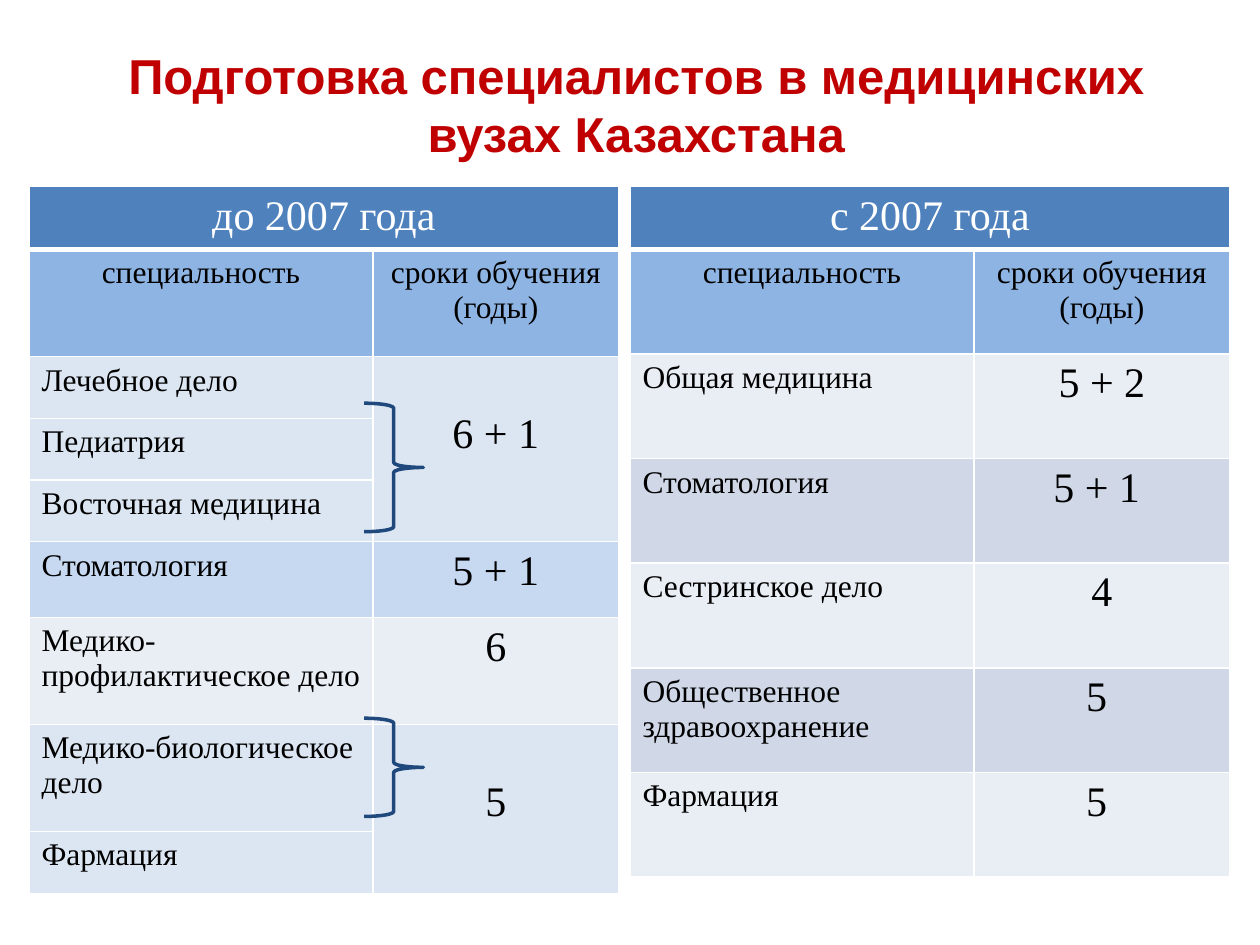
from dataclasses import dataclass

from lxml import etree
from pptx import Presentation
from pptx.dml.color import RGBColor
from pptx.enum.shapes import MSO_SHAPE
from pptx.enum.text import MSO_ANCHOR, PP_ALIGN
from pptx.oxml.ns import qn
from pptx.util import Inches, Pt

LEFT, CENTER = PP_ALIGN.LEFT, PP_ALIGN.CENTER
MIDDLE = MSO_ANCHOR.MIDDLE
RIGHT_BRACE = MSO_SHAPE.RIGHT_BRACE
BLANK_LAYOUT = 6

# The page is a grid of 100 columns by 75 rows, each step 0.1 inch.
GRID_COLUMNS, GRID_ROWS = 100, 75


@dataclass(frozen=True)
class Theme:
    title_font: str = "Arial"
    body_font: str = "Times New Roman"
    title_size: float = 28
    large_size: float = 24
    body_size: float = 18
    title: str = "C00000"
    text: str = "000000"
    white: str = "FFFFFF"
    period: str = "4F81BD"
    heading: str = "8EB4E3"
    group: str = "DCE6F2"
    accent: str = "C6D9F1"
    light: str = "E9EDF4"
    dark: str = "D0D8E8"
    brace: str = "1F497D"
    border: float = 1
    heavy_border: float = 3
    brace_line: float = 2


THEME = Theme()


@dataclass(frozen=True)
class Area:
    column: float
    row: float
    width: float
    height: float


@dataclass(frozen=True)
class Programme:
    name: str
    years: str
    fill: str
    height: float
    span: int = 1  # rows that share the value in the years column


@dataclass(frozen=True)
class Period:
    title: str
    column: float
    widths: tuple[float, float]
    heading_height: float
    programmes: list[Programme]


TABLE_TOP, PERIOD_HEIGHT = 14.8, 4.7
SHORT, MEDIUM, TALL, EVEN = 4.9, 6, 8.5, 8.3

PERIODS = [
    Period("до 2007 года", 2.3, (27.3, 19.5), TALL, [
        Programme("Лечебное дело", "6 + 1", THEME.group, SHORT, span=3),
        Programme("Педиатрия", "", THEME.group, SHORT),
        Programme("Восточная медицина", "", THEME.group, SHORT),
        Programme("Стоматология", "5 + 1", THEME.accent, MEDIUM),
        Programme("Медико-профилактическое дело", "6", THEME.light, TALL),
        Programme("Медико-биологическое дело", "5", THEME.group, TALL, span=2),
        Programme("Фармация", "", THEME.group, SHORT),
    ]),
    Period("с 2007 года", 50, (27.3, 20.3), EVEN, [
        Programme("Общая медицина", "5 + 2", THEME.light, EVEN),
        Programme("Стоматология", "5 + 1 ", THEME.dark, EVEN),
        Programme("Сестринское дело", "4", THEME.light, EVEN),
        Programme("Общественное здравоохранение", "5 ", THEME.dark, EVEN),
        Programme("Фармация", "5 ", THEME.light, EVEN),
    ]),
]

BRACES = [Area(28.9, 32, 4.7, 10.2), Area(28.9, 57, 4.7, 7.8)]


def steps(count: float) -> int:
    return Inches(count / 10)


def place(area: Area) -> tuple[int, ...]:
    return tuple(map(steps, (area.column, area.row, area.width, area.height)))


def write(frame, text: str, *, size: float = THEME.body_size,
          color: str = THEME.text, font: str = THEME.body_font,
          bold: bool = False, align=LEFT) -> None:
    para = frame.paragraphs[0]
    para.alignment = align
    span = para.add_run()
    span.text = text
    span.font.size = Pt(size)
    span.font.name = font
    span.font.bold = bold
    span.font.color.rgb = RGBColor.from_string(color)


def paint(cell, fill: str, bottom: float = THEME.border) -> None:
    """Fill a cell and give it white borders."""
    cell.fill.solid()
    cell.fill.fore_color.rgb = RGBColor.from_string(fill)
    properties = cell._tc.get_or_add_tcPr()
    for index, side in enumerate(("lnL", "lnR", "lnT", "lnB")):
        width = bottom if side == "lnB" else THEME.border
        line = etree.Element(qn(f"a:{side}"), w=str(Pt(width)))
        solid = etree.SubElement(line, qn("a:solidFill"))
        etree.SubElement(solid, qn("a:srgbClr"), val=THEME.white)
        properties.insert(index, line)


def draw_title(page, text: str) -> None:
    box = page.shapes.add_textbox(*place(Area(5.5, 1.6, 90, 13.3)))
    frame = box.text_frame
    frame.word_wrap = True
    frame.vertical_anchor = MIDDLE
    write(frame, text, size=THEME.title_size, color=THEME.title,
          font=THEME.title_font, bold=True, align=CENTER)


def draw_period(page, period: Period) -> None:
    heights = [PERIOD_HEIGHT, period.heading_height]
    heights += [programme.height for programme in period.programmes]
    area = Area(period.column, TABLE_TOP, sum(period.widths), sum(heights))
    table = page.shapes.add_table(len(heights), 2, *place(area)).table
    table.first_row = table.horz_banding = False
    for column, width in zip(table.columns, period.widths):
        column.width = steps(width)
    for row, height in zip(table.rows, heights):
        row.height = steps(height)

    # Period title across both columns
    for column in range(2):
        paint(table.cell(0, column), THEME.period, THEME.heavy_border)
    table.cell(0, 0).merge(table.cell(0, 1))
    write(table.cell(0, 0).text_frame, period.title, size=THEME.large_size,
          color=THEME.white, align=CENTER)

    # Column headings
    for column, text in enumerate(("специальность", "сроки обучения (годы)")):
        paint(table.cell(1, column), THEME.heading)
        write(table.cell(1, column).text_frame, text, align=CENTER)

    # Programmes and their years of study
    for row, programme in enumerate(period.programmes, start=2):
        name, years = table.cell(row, 0), table.cell(row, 1)
        paint(name, programme.fill)
        paint(years, programme.fill)
        write(name.text_frame, programme.name)
        if programme.years:
            write(years.text_frame, programme.years, size=THEME.large_size,
                  align=CENTER)
        if programme.span > 1:
            years.merge(table.cell(row + programme.span - 1, 1))
            years.margin_top = steps(4.3)


def draw_brace(page, area: Area) -> None:
    brace = page.shapes.add_shape(RIGHT_BRACE, *place(area))
    brace.shadow.inherit = False
    brace.fill.background()
    brace.line.color.rgb = RGBColor.from_string(THEME.brace)
    brace.line.width = Pt(THEME.brace_line)


def main() -> None:
    deck = Presentation()
    deck.slide_width, deck.slide_height = steps(GRID_COLUMNS), steps(GRID_ROWS)
    page = deck.slides.add_slide(deck.slide_layouts[BLANK_LAYOUT])
    draw_title(page, "Подготовка специалистов в медицинских вузах Казахстана")
    for period in PERIODS:
        draw_period(page, period)
    for area in BRACES:
        draw_brace(page, area)
    deck.save("out.pptx")


if __name__ == "__main__":
    main()
